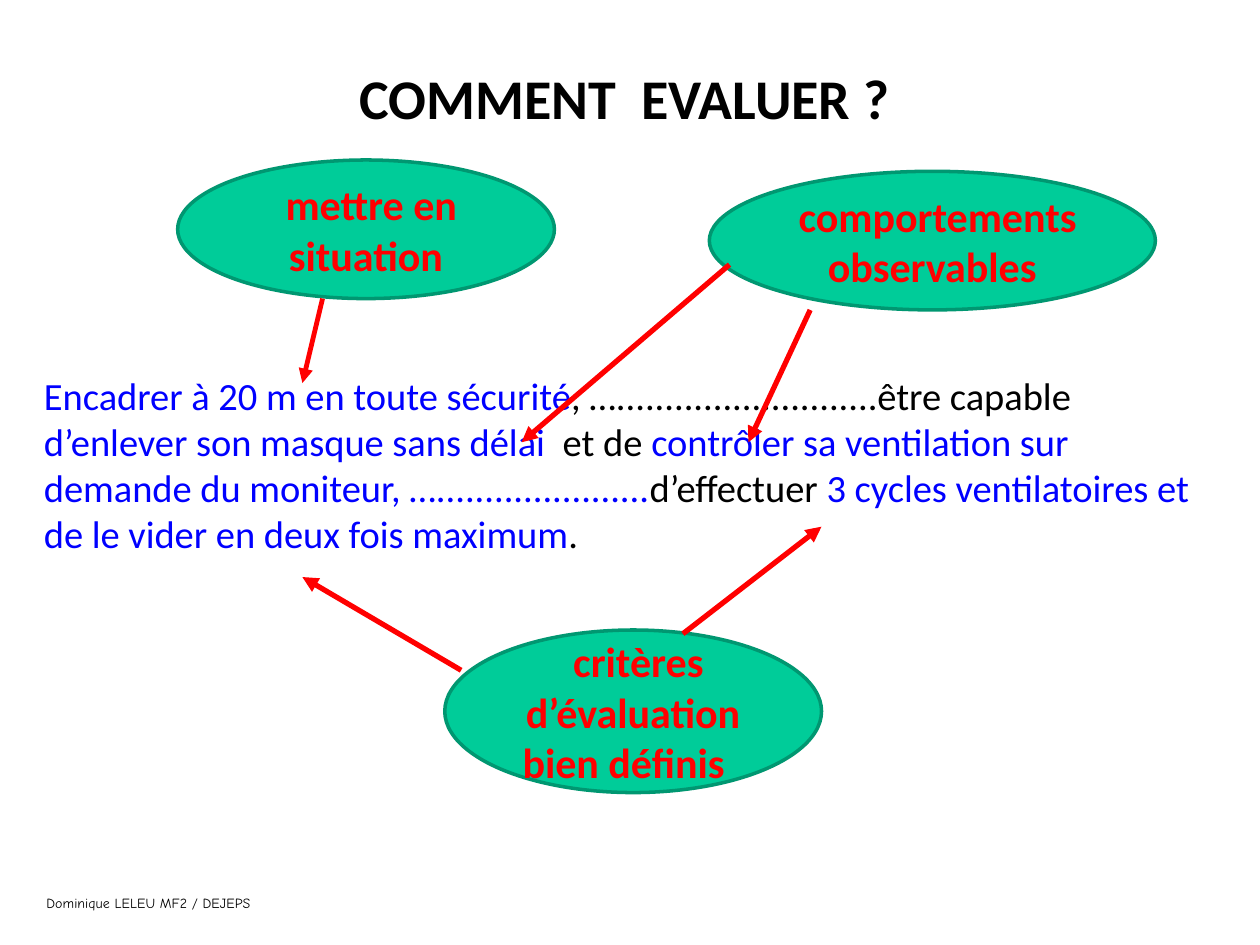
from pptx import Presentation
from pptx.dml.color import RGBColor
from pptx.enum.shapes import MSO_CONNECTOR, MSO_SHAPE
from pptx.enum.text import MSO_ANCHOR, PP_ALIGN
from pptx.oxml.ns import qn
from pptx.util import Inches, Pt
from lxml.etree import SubElement

BLACK, BLUE, RED = "000000", "0000FF", "FF0000"
GREEN, EDGE = "00CC99", "009771"

# Content
TITLE = "COMMENT  EVALUER ?"
FOOTER = "Dominique LELEU MF2 / DEJEPS"
GOAL = [
    ("Encadrer à 20 m en toute sécurité", BLUE),
    (", …...........................être capable ", BLACK),
    ("d’enlever son masque sans délai", BLUE),
    ("  et de ", BLACK),
    ("contrôler sa ventilation sur demande du moniteur, …......................", BLUE),
    ("d’effectuer ", BLACK),
    ("3 cycles ventilatoires et de le vider en deux fois maximum", BLUE),
    (".", BLACK),
]
# Each idea: text, box, then its arrows as (from, to, width)
IDEAS = [
    ("critères d’évaluation bien définis  ", (3.53, 5, 2.99, 1.29),
     [((5.42, 5.03), (6.52, 4.18), 3), ((3.66, 5.32), (2.4, 4.58), 3)]),
    ("comportements observables", (5.63, 1.36, 3.54, 1.1),
     [((6.43, 2.46), (5.94, 3.51), 3), ((5.79, 2.1), (4.14, 3.51), 3)]),
    ("mettre en situation", (1.41, 1.27, 2.99, 1.1),
     [((2.56, 2.37), (2.4, 3.04), 2.75)]),
]


def color(value):
    return RGBColor.from_string(value)


def inches(values):
    return [Inches(v) for v in values]


def add_run(para, text, size, tint, font="Calibri", bold=False):
    run = para.add_run()
    run.text = text
    run.font.size, run.font.name, run.font.bold = Pt(size), font, bold
    run.font.color.rgb = color(tint)


def add_text(box, runs, size, font="Calibri"):
    frame = slide.shapes.add_textbox(*inches(box)).text_frame
    frame.word_wrap = True
    for text, tint in runs:
        add_run(frame.paragraphs[0], text, size, tint, font)


def add_idea(text, box):
    oval = slide.shapes.add_shape(MSO_SHAPE.OVAL, *inches(box))
    oval.shadow.inherit = False
    oval.fill.solid()
    oval.fill.fore_color.rgb = color(GREEN)
    oval.line.color.rgb = color(EDGE)
    oval.line.width = Pt(2)
    frame = oval.text_frame
    frame.word_wrap = True
    frame.vertical_anchor = MSO_ANCHOR.MIDDLE
    para = frame.paragraphs[0]
    para.alignment = PP_ALIGN.CENTER
    add_run(para, " ", 24, "FFFFFF", "Times New Roman")
    add_run(para, text, 24, RED, bold=True)


def add_arrow(start, end, width):
    arrow = slide.shapes.add_connector(
        MSO_CONNECTOR.STRAIGHT, *inches(start + end))
    arrow.line.color.rgb = color(RED)
    arrow.line.width = Pt(width)
    SubElement(arrow.line._get_or_add_ln(), qn("a:tailEnd"), type="triangle")
    SubElement(arrow._element.spPr, qn("a:effectLst"))


deck = Presentation()
deck.slide_width, deck.slide_height = inches((10, 7.5))
slide = deck.slides.add_slide(deck.slide_layouts[5])

# Title
title = slide.shapes.title
title.left, title.top, title.width, title.height = inches((2.67, 0.45, 4.57, 0.64))
title.text_frame.vertical_anchor = MSO_ANCHOR.MIDDLE
head = title.text_frame.paragraphs[0]
head.alignment = PP_ALIGN.CENTER
add_run(head, TITLE, 32, BLACK, bold=True)

# Footer and goal
add_text((0.27, 7.05, 3.39, 0.24), [(FOOTER, BLACK)], 8, "Comic Neue")
add_text((0.25, 2.9, 9.42, 1.6), GOAL, 22)

# Ideas, then the arrows on top of them
for text, box, arrows in IDEAS:
    add_idea(text, box)
for text, box, arrows in IDEAS:
    for arrow in arrows:
        add_arrow(*arrow)

deck.save("out.pptx")
